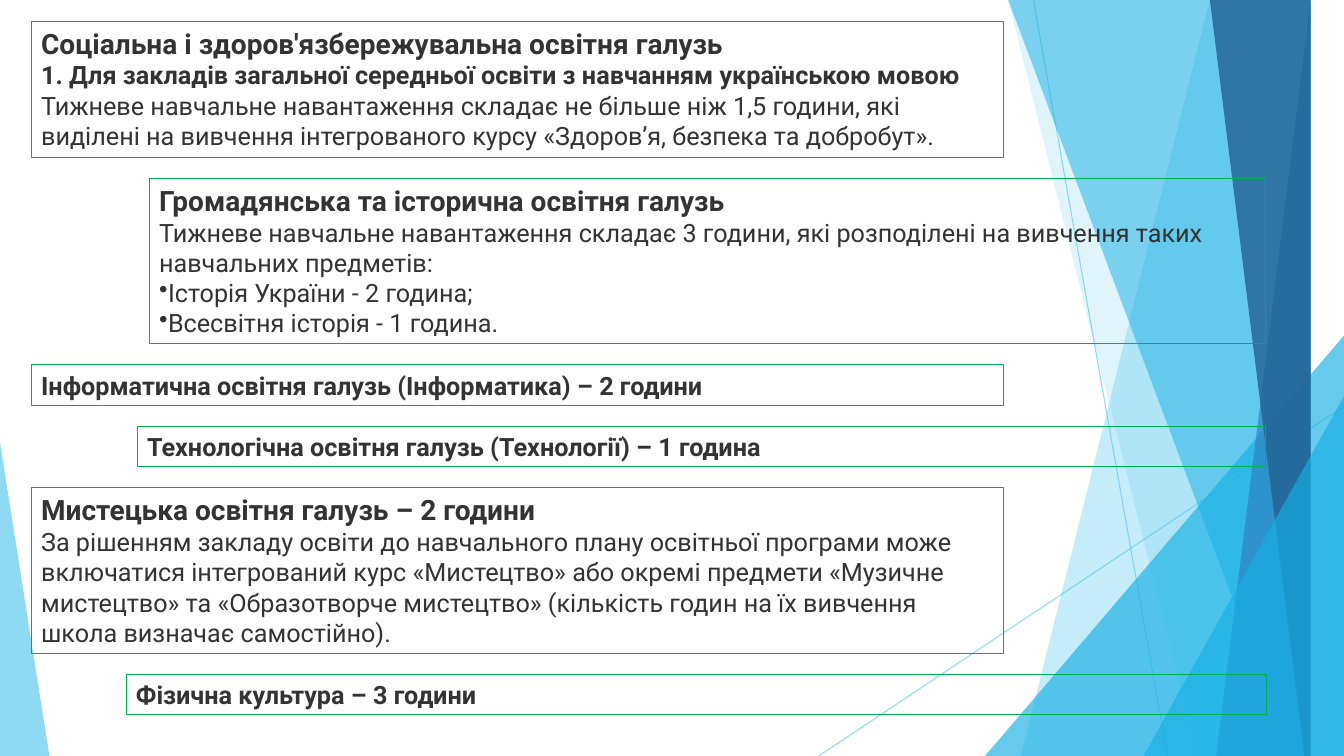
from pptx import Presentation
from pptx.dml.color import RGBColor
from pptx.enum.shapes import MSO_CONNECTOR, MSO_SHAPE
from pptx.util import Inches, Pt
from pptx.oxml.ns import qn
from lxml import etree

LINE = MSO_CONNECTOR.STRAIGHT
TRI = MSO_SHAPE.ISOSCELES_TRIANGLE
W, H = 13.33, 7.5
GAP = 0.21
FONT = "Roboto"
HUES = {"text": "333333", "edge": "00B050", "sky": "5FCBEF",
        "cyan": "17B0E4", "blue": "2E83C3", "navy": "226292"}

RAYS = [((10.25, 0), (11.58, H)), ((W, 4.03), (8.12, H))]

# kind, upper x, lower x, colour, opacity | kind, left, width, height, apex, colour, opacity
DECOR = [
    ("band", (12.28, 10.04), "sky", 36),
    ("band", (10.5, 11.83), "sky", 20),
    ("tri", (9.77, 3.56, 4.17, 1), "cyan", 66),
    ("band", (10.21, 12.91), "cyan", 50),
    ("band", (13.03, 11.92), "blue", 70),
    ("band", (11.96, 13.18), "navy", 80),
    ("tri", (11.34, 1.99, 3.57, 1), "cyan", 66),
    ("tri", (0, 0.49, 3.11, 0), "sky", 70),
]

STYLES = {"head": (20, True), "bold": (18, True),
          "body": (18, False), "item": (18, False)}

BOXES = [
    (0.31, 9.64, 1.35, [
        ("head", "Соціальна і здоров'язбережувальна освітня галузь"),
        ("bold", "1. Для закладів загальної середньої освіти з навчанням українською мовою"),
        ("body", "Тижневе навчальне навантаження складає не більше ніж 1,5 години, які "
                 "виділені на вивчення інтегрованого курсу «Здоров’я, безпека та добробут»."),
    ]),
    (1.48, 11.07, 1.64, [
        ("head", "Громадянська та історична освітня галузь"),
        ("body", "Тижневе навчальне навантаження складає 3 години, які розподілені "
                 "на вивчення таких навчальних предметів:"),
        ("item", "Історія України - 2 година;"),
        ("item", "Всесвітня історія - 1 година."),
    ]),
    (0.31, 9.64, 0.4, [("bold", "Інформатична освітня галузь (Інформатика) – 2 години")]),
    (1.36, 11.19, 0.4, [("bold", "Технологічна освітня галузь (Технології) – 1 година")]),
    (0.31, 9.64, 1.64, [
        ("head", "Мистецька освітня галузь – 2 години"),
        ("body", "За рішенням закладу освіти до навчального плану освітньої програми може "
                 "включатися інтегрований курс «Мистецтво» або окремі предмети «Музичне "
                 "мистецтво» та «Образотворче мистецтво» (кількість годин на їх вивчення "
                 "школа визначає самостійно)."),
    ]),
    (1.25, 11.31, 0.4, [("bold", "Фізична культура – 3 години")]),
]


def hue(name):
    return RGBColor.from_string(HUES[name])


def fade(fill, share):
    clr = fill.find(".//" + qn("a:srgbClr"))
    etree.SubElement(clr, qn("a:alpha")).set("val", str(share * 1000))


def add_ray(shapes, start, end):
    ray = shapes.add_connector(LINE, *map(Inches, start + end))
    ray.line.color.rgb = hue("sky")
    ray.line.width = Pt(0.75)
    props = ray._element.spPr
    fade(props, 70)
    etree.SubElement(props, qn("a:effectLst"))


def add_decor(shapes, kind, dims, name, share):
    if kind == "band":
        top, foot = dims
        pen = shapes.build_freeform(top, 0, scale=Inches(1))
        pen.add_line_segments([(W, 0), (W, H), (foot, H)], close=True)
        shape = pen.convert_to_shape()
    else:
        left, wide, high, apex = dims
        shape = shapes.add_shape(TRI, *map(Inches, (left, H - high, wide, high)))
        shape.adjustments[0] = apex
    shape.shadow.inherit = False
    shape.fill.solid()
    shape.fill.fore_color.rgb = hue(name)
    shape.line.fill.background()
    fade(shape._element.spPr, share)


def add_box(shapes, left, top, wide, high, rows):
    box = shapes.add_textbox(*map(Inches, (left, top, wide, high)))
    box.line.color.rgb = hue("edge")
    box.line.width = Pt(0.75)
    frame = box.text_frame
    frame.word_wrap = True
    frame.text = "\n".join(text for _, text in rows)
    for para, (style, _) in zip(frame.paragraphs, rows):
        font = para.runs[0].font
        size, font.bold = STYLES[style]
        font.size = Pt(size)
        font.name = FONT
        font.color.rgb = hue("text")
        if style == "item":
            props = para._p.get_or_add_pPr()
            props.set("marL", "0")
            props.set("indent", "0")
            etree.SubElement(props, qn("a:buChar")).set("char", "•")


def main():
    deck = Presentation()
    deck.slide_width, deck.slide_height = Inches(W), Inches(H)
    shapes = deck.slides.add_slide(deck.slide_layouts[6]).shapes
    for start, end in RAYS:
        add_ray(shapes, start, end)
    for part in DECOR:
        add_decor(shapes, *part)
    top = GAP
    for left, wide, high, rows in BOXES:
        add_box(shapes, left, top, wide, high, rows)
        top += high + GAP
    deck.save("out.pptx")


if __name__ == "__main__":
    main()
